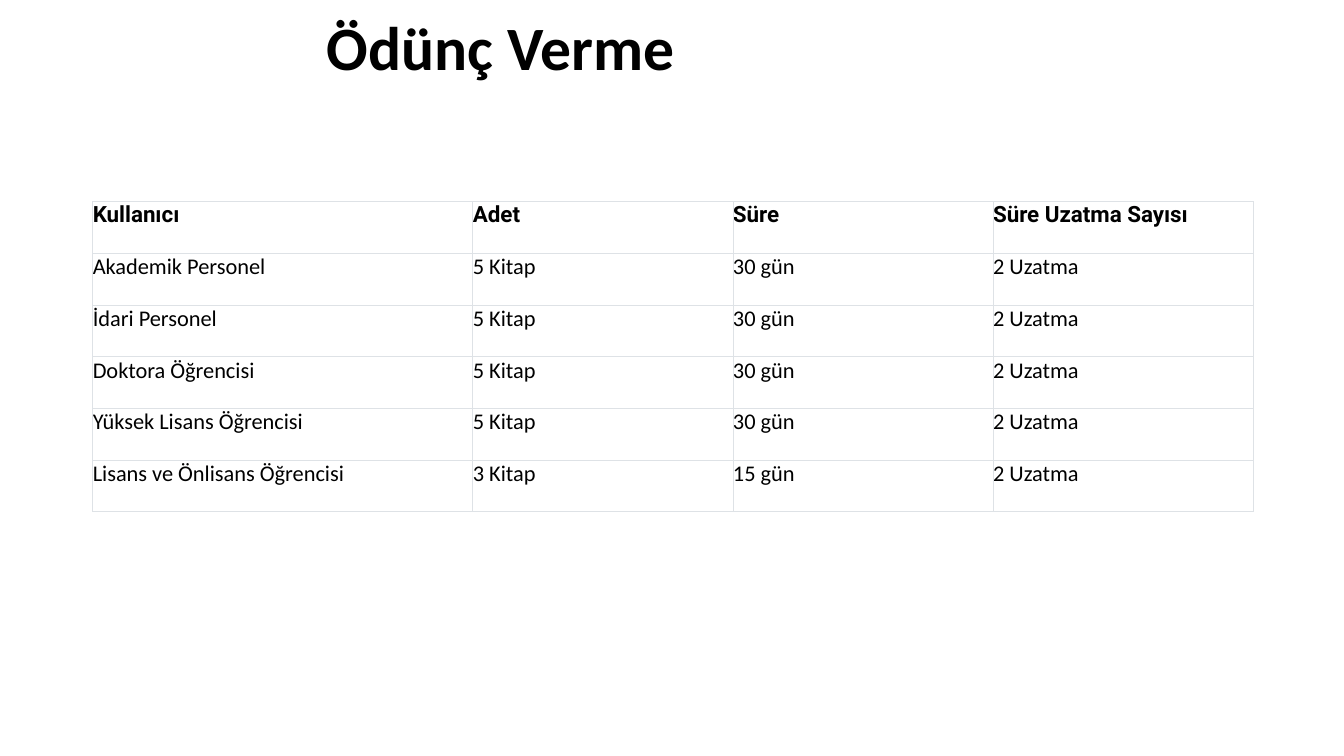
"""Build the library lending rules slide with its title and loan table."""
from lxml.etree import SubElement
from pptx import Presentation
from pptx.dml.color import RGBColor
from pptx.enum.text import MSO_ANCHOR, PP_ALIGN
from pptx.oxml.ns import qn
from pptx.util import Inches, Pt


def add_text(paragraph, text, font_name, size, bold):
    run = paragraph.add_run()
    run.text = text
    run.font.name = font_name
    run.font.size = Pt(size)
    run.font.bold = bold
    run.font.color.rgb = RGBColor.from_string("000000")


def add_borders(cell, color):
    properties = cell._tc.get_or_add_tcPr()
    for side in ("a:lnL", "a:lnR", "a:lnT", "a:lnB"):
        border = SubElement(properties, qn(side), w=str(Pt(0.75)))
        fill = SubElement(border, qn("a:solidFill"))
        SubElement(fill, qn("a:srgbClr"), val=color)


presentation = Presentation()
presentation.slide_width = Inches(13.33)
presentation.slide_height = Inches(7.5)
slide = presentation.slides.add_slide(presentation.slide_layouts[5])

heading = slide.shapes.title
heading.left, heading.top = Inches(3.14), Inches(-0.22)
heading.width, heading.height = Inches(11.5), Inches(1.45)
heading.text_frame.vertical_anchor = MSO_ANCHOR.MIDDLE
heading_line = heading.text_frame.paragraphs[0]
heading_line.alignment = PP_ALIGN.LEFT
heading_line.line_spacing = 0.9
add_text(heading_line, "Ödünç Verme", "Calibri", 44, True)

lending_rules = [
    ("Kullanıcı", "Adet", "Süre", "Süre Uzatma Sayısı"),
    ("Akademik Personel", "5 Kitap", "30 gün", "2 Uzatma"),
    ("İdari Personel", "5 Kitap", "30 gün", "2 Uzatma"),
    ("Doktora Öğrencisi", "5 Kitap", "30 gün", "2 Uzatma"),
    ("Yüksek Lisans Öğrencisi", "5 Kitap", "30 gün", "2 Uzatma"),
    ("Lisans ve Önlisans Öğrencisi", "3 Kitap", "15 gün", "2 Uzatma"),
]
column_widths = (3.77, 2.58, 2.58, 2.58)
lending_table = slide.shapes.add_table(
    len(lending_rules), len(column_widths),
    Inches(0.92), Inches(2), Inches(sum(column_widths)), Inches(3.08),
).table
lending_table.horz_banding = False
for column, width in zip(lending_table.columns, column_widths):
    column.width = Inches(width)

for row_index, rule in enumerate(lending_rules):
    is_header = row_index == 0
    for column_index, entry in enumerate(rule):
        cell = lending_table.cell(row_index, column_index)
        cell.margin_left = cell.margin_right = Inches(0)
        cell.margin_top = cell.margin_bottom = Inches(0)
        add_borders(cell, "DEE2E6")
        cell.fill.background()
        add_text(cell.text_frame.paragraphs[0], entry,
                 "Roboto" if is_header else "Calibri", 16, is_header)

presentation.save("out.pptx")
